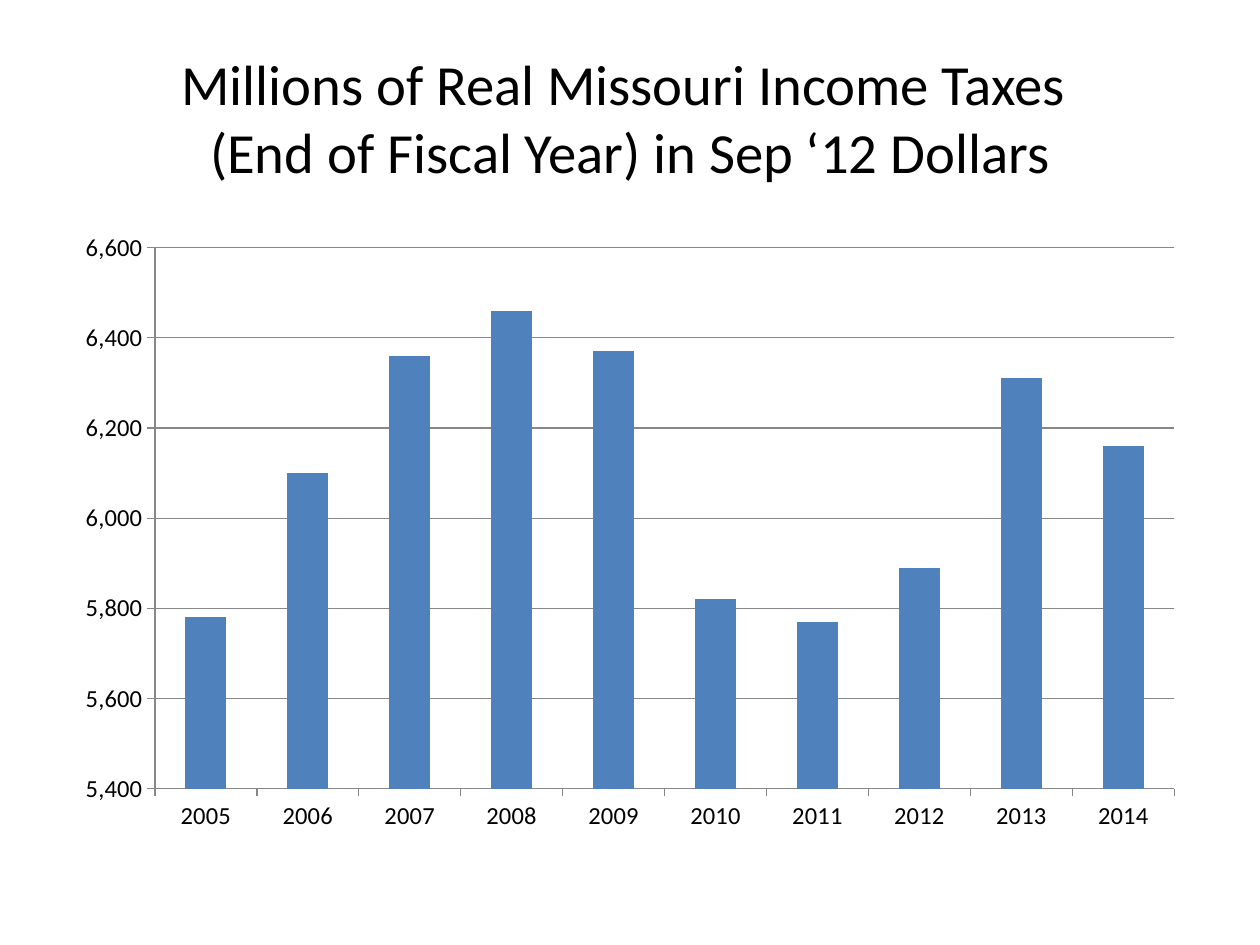
"""Build a slide with a column chart of real Missouri income taxes by fiscal year."""
from pptx import Presentation
from pptx import util as u
from pptx.chart.data import CategoryChartData
from pptx.dml.color import RGBColor
from pptx.enum import chart as charts, text

PX = u.Inches(1) / 126
FONT = "Calibri"


def box(*lengths):
    return [u.Emu(round(length * PX)) for length in lengths]


def color(value):
    return RGBColor.from_string(value)


presentation = Presentation()
presentation.slide_width, presentation.slide_height = box(1260, 945)
slide = presentation.slides.add_slide(presentation.slide_layouts[6])

title = slide.shapes.add_textbox(*box(63, 38, 1134, 157)).text_frame
title.word_wrap = True
title.vertical_anchor = text.MSO_ANCHOR.MIDDLE
paragraph = title.paragraphs[0]
paragraph.text = "Millions of Real Missouri Income Taxes \v(End of Fiscal Year) in Sep ‘12 Dollars"
paragraph.alignment = text.PP_ALIGN.CENTER
paragraph.font.name = FONT
paragraph.font.size = u.Pt(32.4)
paragraph.font.color.rgb = color("000000")

taxes = CategoryChartData(number_format="#,##0")
taxes.categories = [str(year) for year in range(2005, 2015)]
taxes.add_series("Series 1", [5780, 6100, 6360, 6460, 6370, 5820, 5770, 5890, 6310, 6160])
chart = slide.shapes.add_chart(
    charts.XL_CHART_TYPE.COLUMN_CLUSTERED, *box(63, 220, 1134, 624), taxes
).chart
chart.has_title = False
chart.has_legend = False
chart.font.name = FONT
chart.font.size = u.Pt(14)
chart.font.color.rgb = color("000000")

plot = chart.plots[0]
plot.vary_by_categories = False
plot.gap_width = 150
columns = plot.series[0].format.fill
columns.solid()
columns.fore_color.rgb = color("4F81BD")

value_axis = chart.value_axis
value_axis.minimum_scale = 5400
value_axis.maximum_scale = 6600
value_axis.major_unit = 200
value_axis.has_major_gridlines = True
value_axis.tick_labels.number_format = "#,##0"
value_axis.tick_labels.number_format_is_linked = False

for axis in (chart.category_axis, value_axis):
    axis.major_tick_mark = charts.XL_TICK_MARK.OUTSIDE
    axis.minor_tick_mark = charts.XL_TICK_MARK.NONE
for ruled in (chart.category_axis, value_axis, value_axis.major_gridlines):
    ruled.format.line.color.rgb = color("878787")
    ruled.format.line.width = u.Pt(0.75)

presentation.save("out.pptx")
